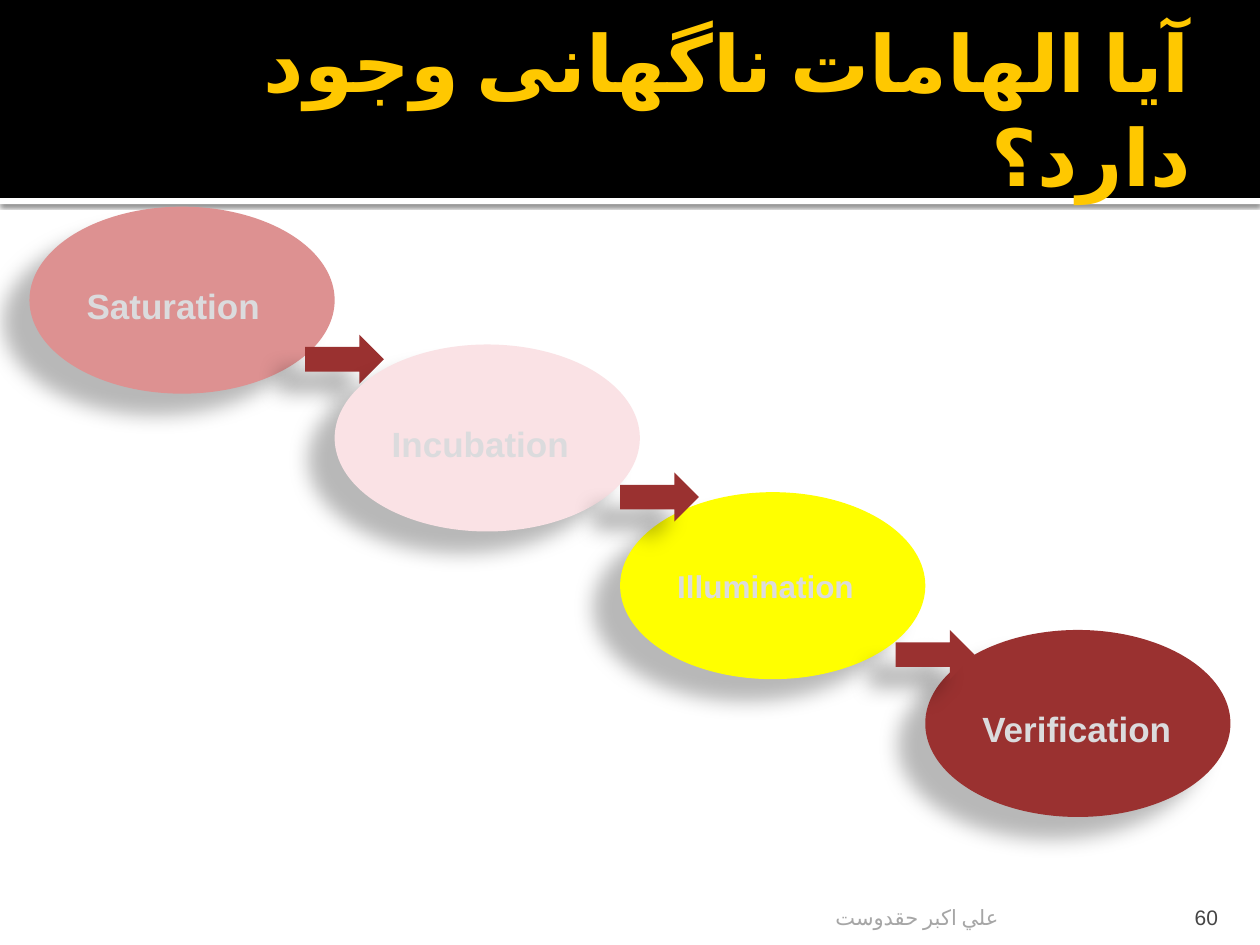
from dataclasses import dataclass
from lxml.etree import SubElement
from pptx import Presentation
from pptx.dml.color import RGBColor
from pptx.enum.shapes import MSO_SHAPE as Preset
from pptx.enum.text import MSO_ANCHOR as Anchor, MSO_AUTO_SIZE as AutoSize, PP_ALIGN as Align
from pptx.oxml.ns import qn
from pptx.util import Inches, Pt

COLUMNS, ROWS = 128, 96
CELL = Inches(10) / COLUMNS
COLORS = {
    "white": "FFFFFF", "black": "000000", "gold": "FFC800", "footer": "A6A6A6",
    "number": "454545", "label": "DBDBDD", "rose": "DD9191", "blush": "FAE2E5",
    "yellow": "FFFF00", "brick": "9A3130",
}


@dataclass
class Shadow:
    alpha: int
    blur: float
    distance: float
    angle: int


@dataclass
class Stage:
    label: str
    column: float
    row: float
    fill: str
    size: int = 20
    drop: float = 0.08


@dataclass
class Arrow:
    column: float
    row: float


RULE_SHADOW = Shadow(60, 2.5, 0.8, 90)
STEP_SHADOW = Shadow(28, 11.8, 19.7, 141)
STEPS = [
    Stage("Saturation", 3, 21, "rose"),
    Arrow(31, 34),
    Stage("Incubation", 34, 35, "blush"),
    Stage("Illumination", 63, 50, "yellow", 18, 0),
    Arrow(63, 48),
    Stage("Verification", 94, 64, "brick"),
    Arrow(91, 64),
]


def grid(*lengths: float) -> list[int]:
    return [round(length * CELL) for length in lengths]


def add_shadow(shape, shadow: Shadow) -> None:
    effects = shape.element.spPr.find(qn("a:effectLst"))
    outer = SubElement(effects, qn("a:outerShdw"), blurRad=str(Pt(shadow.blur)),
                       dist=str(Pt(shadow.distance)), dir=str(shadow.angle * 60000),
                       algn="ctr", rotWithShape="0")
    color = SubElement(outer, qn("a:srgbClr"), val=COLORS["black"])
    SubElement(color, qn("a:alpha"), val=str(shadow.alpha * 1000))


def add_filled(slide, preset, box: tuple, fill: str, shadow: Shadow | None = None):
    shape = slide.shapes.add_shape(preset, *grid(*box))
    shape.shadow.inherit = False
    shape.fill.solid()
    shape.fill.fore_color.rgb = RGBColor.from_string(COLORS[fill])
    shape.line.fill.background()
    if shadow:
        add_shadow(shape, shadow)
    return shape


def write(shape, text: str, size: int, font_name: str, color: str, align,
          anchor=Anchor.MIDDLE, bold: bool = False, rtl: bool = False) -> None:
    frame = shape.text_frame
    frame.text = text
    frame.word_wrap = True
    frame.auto_size = AutoSize.NONE
    frame.vertical_anchor = anchor
    paragraph = frame.paragraphs[0]
    paragraph.alignment = align
    run = paragraph.runs[0]
    run.font.name = font_name
    run.font.size = Pt(size)
    run.font.bold = bold
    run.font.color.rgb = RGBColor.from_string(COLORS[color])
    if rtl:
        paragraph._p.get_or_add_pPr().set("rtl", "1")
        properties = run._r.get_or_add_rPr()
        properties.set("lang", "fa-IR")
        SubElement(properties, qn("a:cs"), typeface=font_name)


def add_header(slide) -> None:
    title = slide.shapes.title
    title.left, title.top, title.width, title.height = grid(6.4, 2.2, 115.2, 17.5)
    write(title, "آیا الهامات ناگهانی وجود دارد؟", 45, "Calibri", "gold",
          Align.RIGHT, bold=True, rtl=True)
    title.text_frame.margin_right = Inches(0.05)
    rule = add_filled(slide, Preset.RECTANGLE, (0, 20.1, COLUMNS, 0.64), "white", RULE_SHADOW)
    band = add_filled(slide, Preset.RECTANGLE, (0, 0, COLUMNS, 20.1), "black")
    for shape in (rule, band):
        title.element.addprevious(shape.element)


def add_footer(slide, text: str, column: float, width: float, color: str,
               margin: float, rtl: bool = False) -> None:
    box = slide.shapes.add_textbox(*grid(column, ROWS - 5.4, width, 3.84))
    write(box, text, 12, "Calibri" if rtl else "Arial", color, Align.RIGHT, Anchor.BOTTOM, rtl=rtl)
    box.text_frame.margin_right = Inches(margin)
    box.text_frame.margin_bottom = 0


def add_stage(slide, stage: Stage) -> None:
    oval = add_filled(slide, Preset.OVAL, (stage.column, stage.row, 31, 19), stage.fill, STEP_SHADOW)
    write(oval, stage.label, stage.size, "Arial", "label", Align.LEFT, bold=True)
    oval.text_frame.margin_top = Inches(0.05 + stage.drop)


def add_arrow(slide, arrow: Arrow) -> None:
    add_filled(slide, Preset.RIGHT_ARROW, (arrow.column, arrow.row, 8, 5), "brick", STEP_SHADOW)


def main() -> None:
    presentation = Presentation()
    presentation.slide_width, presentation.slide_height = grid(COLUMNS, ROWS)
    slide = presentation.slides.add_slide(presentation.slide_layouts[5])
    add_header(slide)
    add_footer(slide, "علي اكبر حقدوست", 24, 78.1, "footer", 0.05, rtl=True)
    add_footer(slide, "60", 114.8, 10.2, "number", 0.1)
    for step in STEPS:
        if isinstance(step, Stage):
            add_stage(slide, step)
        else:
            add_arrow(slide, step)
    presentation.save("out.pptx")


if __name__ == "__main__":
    main()
